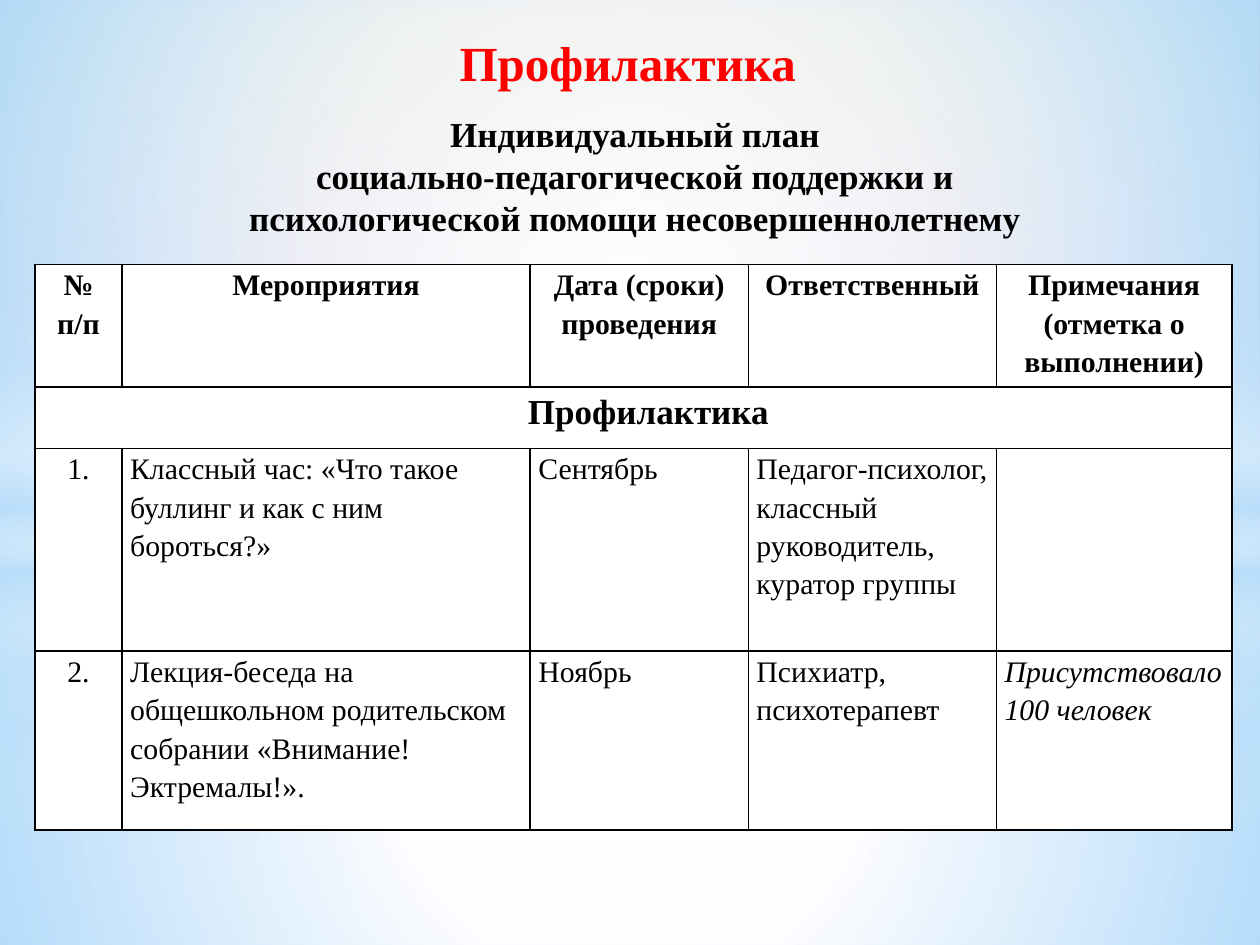
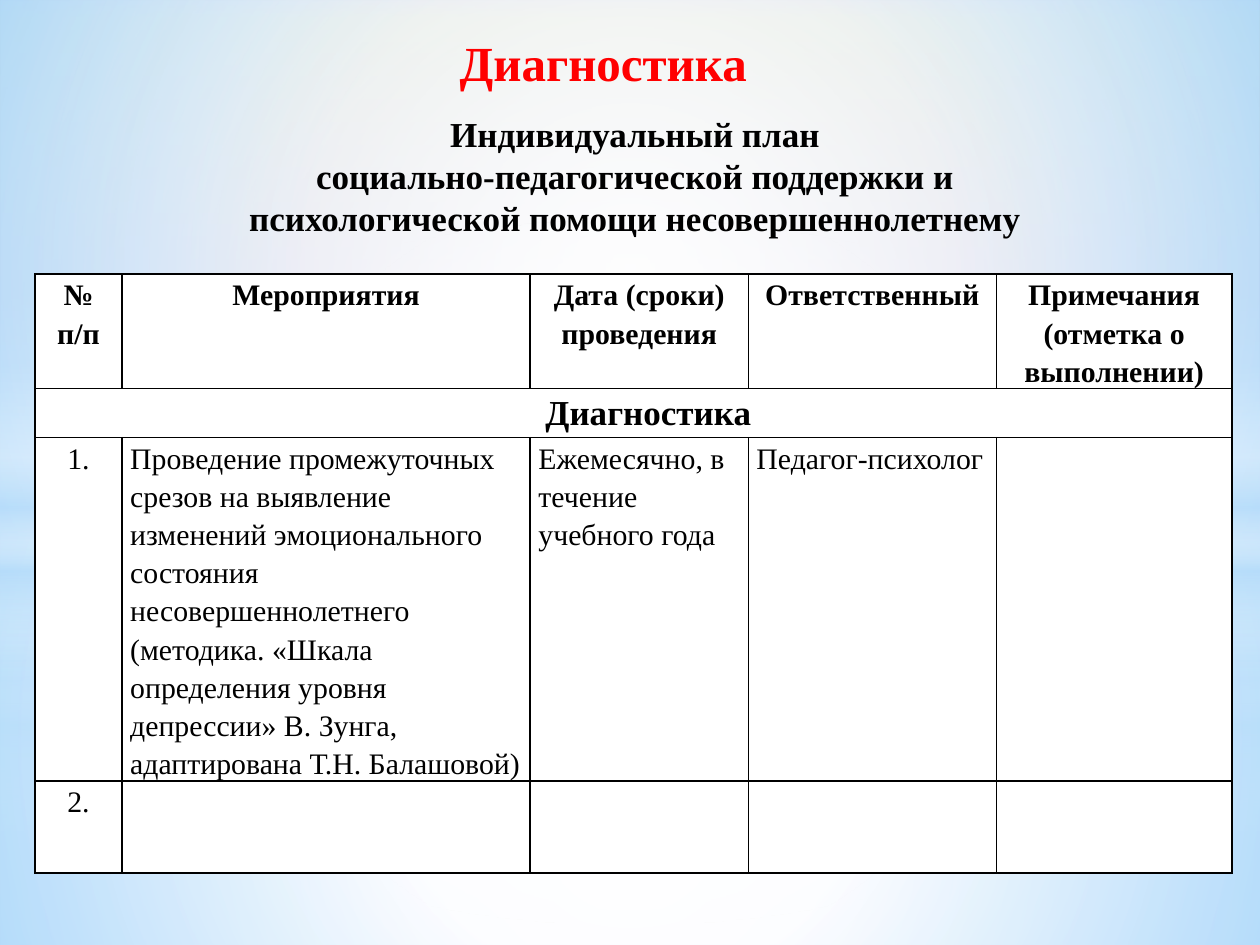
from dataclasses import dataclass
from typing import NamedTuple

from lxml import etree
from pptx import Presentation
from pptx.dml.color import RGBColor
from pptx.enum.shapes import MSO_SHAPE
from pptx.enum.text import MSO_ANCHOR, MSO_AUTO_SIZE, PP_ALIGN
from pptx.oxml import parse_xml
from pptx.oxml.ns import nsdecls, qn
from pptx.util import Pt

RECTANGLE, ELLIPSE = MSO_SHAPE.RECTANGLE, MSO_SHAPE.OVAL
LEFT, CENTER = PP_ALIGN.LEFT, PP_ALIGN.CENTER
TOP, FIXED_SIZE = MSO_ANCHOR.TOP, MSO_AUTO_SIZE.NONE
TITLE_ONLY = 5
BORDER_SIDES = ("L", "R", "T", "B")


@dataclass(frozen=True)
class Theme:
    """Fonts, colours and type sizes shared by the slides."""

    font: str = "Times New Roman"
    title_color: str = "FF0000"
    ink: str = "000000"
    white: str = "FFFFFF"
    sky: str = "B4DCFA"
    title_size: float = 28
    heading_size: float = 20
    table_size: float = 17
    border_width: float = 1


class Stop(NamedTuple):
    """One gradient stop, with position and opacity in percent."""

    position: int
    color: str
    opacity: int = 100


class Box(NamedTuple):
    """A rectangle in points."""

    left: float
    top: float
    width: float
    height: float


class Glow(NamedTuple):
    """One layer of backdrop lights."""

    horizon: float
    band_top: float
    fade_end: int


class Plan(NamedTuple):
    """The contents of one plan slide."""

    title: str
    title_width: float
    table_top: float
    row_heights: tuple[float, ...]
    activities: tuple[tuple[str, ...], ...]


THEME = Theme()
SLIDE_WIDTH, SLIDE_HEIGHT = 720, 540
HEADING = (
    "Индивидуальный план\n"
    "социально-педагогической поддержки и\n"
    "психологической помощи несовершеннолетнему"
)
HEADING_BOX = Box(42.5, 60.5, 640.8, 80)
TITLE_LEFT, TITLE_TOP, TITLE_HEIGHT = 255.5, 15.1, 41
TABLE_LEFT = 20
COLUMN_WIDTHS = (49.7, 233.3, 124.6, 141.8, 134.6)
CELL_MARGIN, SECTION_INDENT = 4.7, 17
COLUMN_TITLES = (
    "№ п/п",
    "Мероприятия",
    "Дата (сроки) проведения",
    "Ответственный",
    "Примечания\n(отметка о выполнении)",
)

SKY_STOPS = (
    Stop(0, "8D9AAC"),
    Stop(2, "96AB94"),
    Stop(31, "8488C4"),
    Stop(45, "D4DEFF"),
    Stop(94, "D4DEFF"),
)
LOWER_STOPS = (
    Stop(0, THEME.white, 91), Stop(37, THEME.white, 76), Stop(100, THEME.sky, 79)
)
UPPER_STOPS = (
    Stop(0, THEME.white, 89), Stop(48, THEME.white, 62), Stop(100, THEME.sky, 79)
)
BAND_STOPS = (
    Stop(0, THEME.white, 0),
    Stop(29, THEME.white, 30),
    Stop(45, THEME.sky, 40),
    Stop(55, THEME.white, 26),
    Stop(65, THEME.sky, 60),
    Stop(100, THEME.white, 0),
)
GLOWS = (Glow(401.8, 296.6, 56), Glow(304.6, 208.8, 54))
BAND_HEIGHT = 180
ELLIPSE_BOX = Box(0, 126, SLIDE_WIDTH, 401.8)

PLANS = (
    Plan(
        "Профилактика", 235, 151, (70.2, 35, 115.9, 102.2),
        (
            (
                "1.",
                "Классный час: «Что такое буллинг и как с ним бороться?»",
                "Сентябрь",
                "Педагог-психолог,\nклассный руководитель, куратор группы",
                "",
            ),
            (
                "2.",
                "Лекция-беседа на общешкольном родительском собрании "
                "«Внимание! Эктремалы!».",
                "Ноябрь",
                "Психиатр, психотерапевт",
                "Присутствовало 100 человек",
            ),
        ),
    ),
    Plan(
        "Диагностика", 187, 156.7, (58.3, 28, 179.3, 52.5),
        (
            (
                "1.",
                "Проведение промежуточных срезов на выявление изменений "
                "эмоционального состояния несовершеннолетнего (методика. "
                "«Шкала определения уровня депрессии» В. Зунга, "
                "адаптирована Т.Н. Балашовой)",
                "Ежемесячно, в течение\nучебного года",
                "Педагог-психолог",
                "",
            ),
            ("2.", "", "", "", ""),
        ),
    ),
)


def paint_gradient(properties, stops: tuple[Stop, ...], radial: bool = False) -> None:
    """Replace the solid fill in the given properties with a gradient."""
    stop_xml = "".join(
        f'<a:gs pos="{stop.position * 1000}"><a:srgbClr val="{stop.color}">'
        f'<a:alpha val="{stop.opacity * 1000}"/></a:srgbClr></a:gs>'
        for stop in stops
    )
    direction = (
        '<a:path path="circle"><a:fillToRect l="50000" t="50000" r="50000" b="50000"/></a:path>'
        if radial
        else '<a:lin ang="5400000" scaled="0"/>'
    )
    gradient = parse_xml(
        f'<a:gradFill {nsdecls("a")} rotWithShape="1">'
        f"<a:gsLst>{stop_xml}</a:gsLst>{direction}</a:gradFill>"
    )
    properties.replace(properties.find(qn("a:solidFill")), gradient)


def add_light(slide, kind, box: Box, stops: tuple[Stop, ...], radial: bool = True):
    """Add one borderless gradient shape."""
    shape = slide.shapes.add_shape(kind, *map(Pt, box))
    shape.shadow.inherit = False
    shape.line.fill.background()
    shape.fill.solid()
    paint_gradient(shape.element.spPr, stops, radial)
    return shape


def build_backdrop(layout, slide) -> None:
    """Draw the sky lights on a slide and move them into its layout."""
    layout.background.fill.solid()
    paint_gradient(layout.element.xpath("//p:bgPr")[0], SKY_STOPS)
    lights = []
    for glow in GLOWS:
        lower = Box(0, glow.horizon, SLIDE_WIDTH, SLIDE_HEIGHT - glow.horizon)
        upper = Box(0, 0, SLIDE_WIDTH, glow.horizon)
        band = Box(0, glow.band_top, SLIDE_WIDTH, BAND_HEIGHT)
        core = (Stop(0, THEME.white), Stop(glow.fade_end, THEME.white, 0))
        lights += [
            add_light(slide, RECTANGLE, lower, LOWER_STOPS),
            add_light(slide, RECTANGLE, upper, UPPER_STOPS),
            add_light(slide, RECTANGLE, band, BAND_STOPS, radial=False),
            add_light(slide, ELLIPSE, ELLIPSE_BOX, core),
        ]
    for index, shape in enumerate(lights):
        shape.element.nvSpPr.cNvPr.set("id", str(100 + index))
        layout.shapes.element.insert(2 + index, shape.element)


def format_text(
    text_frame, size: float, color: str = THEME.ink, bold: bool = False,
    italic: bool = False, alignment=LEFT, spacing: float = 1.0,
) -> None:
    """Format every paragraph and run of a text frame."""
    for paragraph in text_frame.paragraphs:
        paragraph.alignment = alignment
        paragraph.line_spacing = spacing
        for run in paragraph.runs:
            run.font.name = THEME.font
            run.font.size = Pt(size)
            run.font.bold = bold
            run.font.italic = italic
            run.font.color.rgb = RGBColor.from_string(color)


def set_title(slide, plan: Plan) -> None:
    """Place and format the slide title."""
    title = slide.shapes.title
    title.left, title.top = Pt(TITLE_LEFT), Pt(TITLE_TOP)
    title.width, title.height = Pt(plan.title_width), Pt(TITLE_HEIGHT)
    text_frame = title.text_frame
    text_frame.text = plan.title
    text_frame.vertical_anchor = TOP
    text_frame.auto_size = FIXED_SIZE
    format_text(text_frame, THEME.title_size, THEME.title_color, bold=True)


def add_heading(slide) -> None:
    """Add the plan heading below the title."""
    text_frame = slide.shapes.add_textbox(*map(Pt, HEADING_BOX)).text_frame
    text_frame.word_wrap = True
    text_frame.text = HEADING
    format_text(text_frame, THEME.heading_size, bold=True, alignment=CENTER)


def style_cell(cell) -> None:
    """Give a cell its margins, white fill and black borders."""
    cell.margin_left = cell.margin_right = Pt(CELL_MARGIN)
    cell.margin_top = cell.margin_bottom = 0
    cell.vertical_anchor = TOP
    cell.fill.solid()
    cell.fill.fore_color.rgb = RGBColor.from_string(THEME.white)
    properties = cell._tc.get_or_add_tcPr()
    for index, side in enumerate(BORDER_SIDES):
        border = etree.Element(qn(f"a:ln{side}"), w=str(Pt(THEME.border_width)))
        fill = etree.SubElement(border, qn("a:solidFill"))
        etree.SubElement(fill, qn("a:srgbClr"), val=THEME.ink)
        properties.insert(index, border)


def add_plan_table(slide, plan: Plan) -> None:
    """Add the table of activities with a merged section row."""
    section = (plan.title,) + ("",) * (len(COLUMN_TITLES) - 1)
    rows = (COLUMN_TITLES, section, *plan.activities)
    box = Box(TABLE_LEFT, plan.table_top, sum(COLUMN_WIDTHS), sum(plan.row_heights))
    table = slide.shapes.add_table(len(rows), len(COLUMN_TITLES), *map(Pt, box)).table
    table.first_row = table.horz_banding = False
    for column, width in zip(table.columns, COLUMN_WIDTHS):
        column.width = Pt(width)
    for row, height in zip(table.rows, plan.row_heights):
        row.height = Pt(height)
    for row_index, texts in enumerate(rows):
        is_heading = row_index < 2
        size = THEME.heading_size if row_index == 1 else THEME.table_size
        for column_index, text in enumerate(texts):
            cell = table.cell(row_index, column_index)
            style_cell(cell)
            cell.text_frame.text = text
            is_note = not is_heading and column_index == len(texts) - 1
            alignment = CENTER if is_heading or column_index == 0 else LEFT
            format_text(
                cell.text_frame, size, bold=is_heading, italic=is_note,
                alignment=alignment, spacing=1.15,
            )
    section_cell = table.cell(1, 0)
    section_cell.merge(table.cell(1, len(COLUMN_TITLES) - 1))
    section_cell.margin_left = Pt(CELL_MARGIN + SECTION_INDENT)


def main() -> None:
    """Build and save the presentation."""
    presentation = Presentation()
    presentation.slide_width, presentation.slide_height = Pt(SLIDE_WIDTH), Pt(SLIDE_HEIGHT)
    layout = presentation.slide_layouts[TITLE_ONLY]
    slides = [presentation.slides.add_slide(layout) for _ in PLANS]
    build_backdrop(layout, slides[0])
    for slide, plan in zip(slides, PLANS):
        set_title(slide, plan)
        add_plan_table(slide, plan)
        add_heading(slide)
    presentation.save("out.pptx")


if __name__ == "__main__":
    main()
